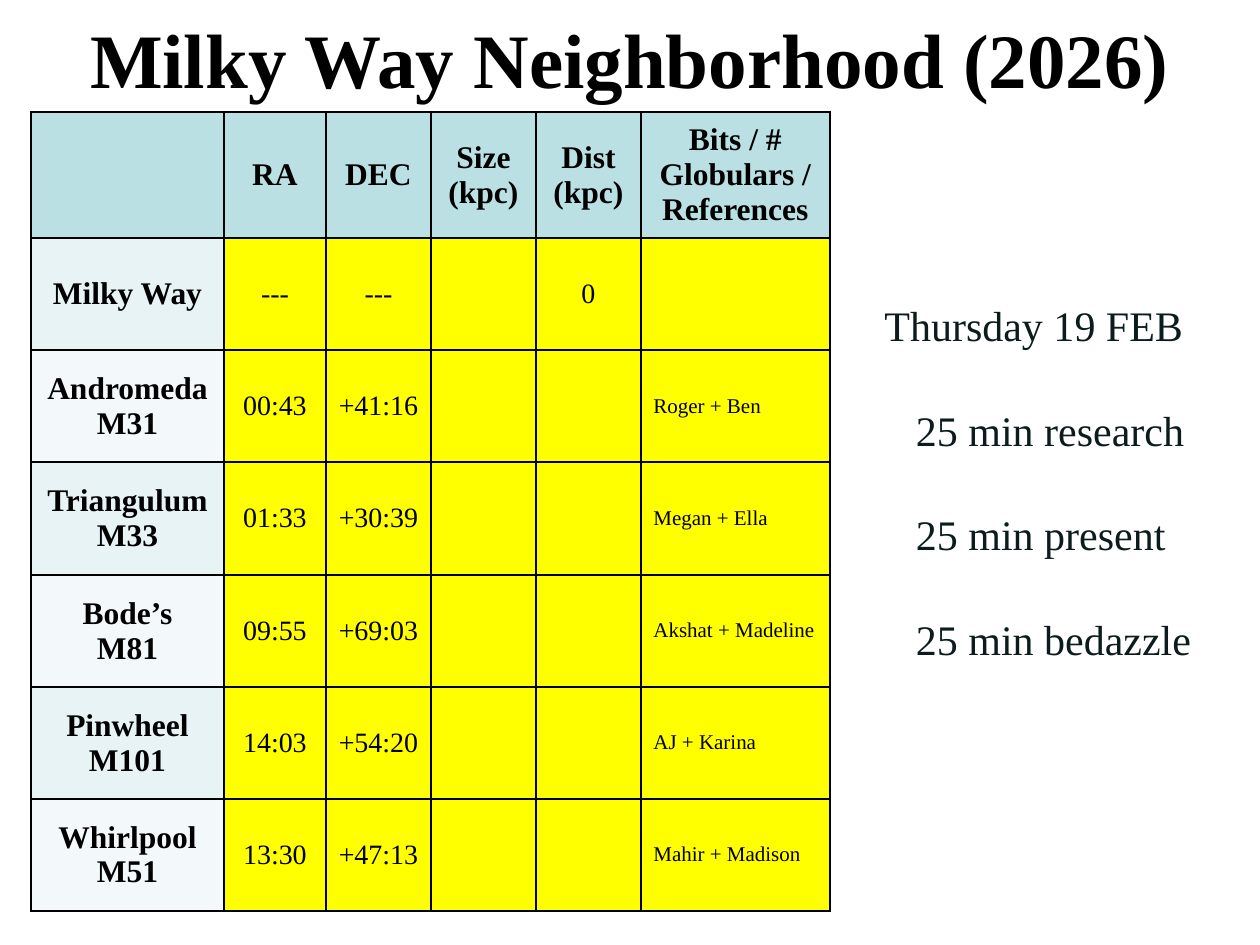
from lxml import etree
from pptx import Presentation
from pptx import util as u
from pptx.dml.color import RGBColor
from pptx.enum import text
from pptx.oxml.ns import qn

PX = 914400 // 126
FONT = "Times New Roman"
BLACK = RGBColor(0x00, 0x00, 0x00)
INK = RGBColor(0x0C, 0x1C, 0x1D)
HEADER_FILL = RGBColor(0xBB, 0xE0, 0xE3)
NAME_FILLS = RGBColor(0xF3, 0xF9, 0xFA), RGBColor(0xE7, 0xF3, 0xF4)
YELLOW = RGBColor(0xFF, 0xFF, 0x00)

TITLE = "Milky Way Neighborhood (2026)"
GALAXIES = [
    ("", "RA", "DEC", "Size\n(kpc)", "Dist (kpc)", "Bits / # Globulars / References"),
    ("Milky Way", "---", "---", "", "0", ""),
    ("Andromeda\nM31", "00:43", "+41:16", "", "", "Roger + Ben"),
    ("Triangulum\nM33", "01:33", "+30:39", "", "", "Megan + Ella"),
    ("Bode’s\nM81", "09:55", "+69:03", "", "", "Akshat + Madeline"),
    ("Pinwheel\nM101", "14:03", "+54:20", "", "", "AJ + Karina"),
    ("Whirlpool\nM51", "13:30", "+47:13", "", "", "Mahir + Madison"),
]
COLUMN_WIDTHS = [193, 102, 105, 105, 105, 189]
ROW_HEIGHTS = [103, 112, 112, 113, 112, 112, 112]
DAY = "Thursday 19 FEB"
AGENDA = ["25 min research", "25 min present", "25 min bedazzle"]


def box(left, top, width, height):
    return [u.Emu(n * PX) for n in (left, top, width, height)]


def write(frame, lines, size, color=BLACK, bold=False, align=text.PP_ALIGN.LEFT):
    """Put each line in its own paragraph and return the paragraphs."""
    for index, line in enumerate(lines):
        paragraph = frame.add_paragraph() if index else frame.paragraphs[0]
        paragraph.alignment = align
        run = paragraph.add_run()
        run.text = line
        run.font.name, run.font.size = FONT, u.Pt(size)
        run.font.bold, run.font.color.rgb = bold, color
    return frame.paragraphs


def add_borders(cell):
    """Give the cell black 1 pt edges; they must come before its fill."""
    properties = cell._tc.get_or_add_tcPr()
    for index, edge in enumerate(("lnL", "lnR", "lnT", "lnB")):
        line = etree.Element(qn("a:" + edge), w=str(u.Pt(1)))
        fill = etree.SubElement(line, qn("a:solidFill"))
        etree.SubElement(fill, qn("a:srgbClr"), val=str(BLACK))
        properties.insert(index, line)


def add_title(slide):
    frame = slide.shapes.add_textbox(*box(0, 0, 1260, 116)).text_frame
    frame.word_wrap = True
    frame.vertical_anchor = text.MSO_ANCHOR.MIDDLE
    write(frame, [TITLE], 44, bold=True, align=text.PP_ALIGN.CENTER)


def add_galaxy_table(slide):
    table = slide.shapes.add_table(
        len(GALAXIES), len(COLUMN_WIDTHS),
        *box(31, 112, sum(COLUMN_WIDTHS), sum(ROW_HEIGHTS))).table
    table.first_row = table.horz_banding = False
    for column, width in zip(table.columns, COLUMN_WIDTHS):
        column.width = u.Emu(width * PX)
    for row, height in zip(table.rows, ROW_HEIGHTS):
        row.height = u.Emu(height * PX)

    for r, values in enumerate(GALAXIES):
        for c, value in enumerate(values):
            cell = table.cell(r, c)
            heading = r == 0 or c == 0
            team = not heading and c == len(values) - 1
            cell.vertical_anchor = text.MSO_ANCHOR.MIDDLE
            cell.fill.solid()
            cell.fill.fore_color.rgb = (
                HEADER_FILL if r == 0 else NAME_FILLS[r % 2] if c == 0 else YELLOW)
            add_borders(cell)
            if value:
                write(cell.text_frame, value.split("\n"),
                      18 if heading else 12 if team else 16, bold=heading,
                      align=text.PP_ALIGN.LEFT if team else text.PP_ALIGN.CENTER)


def add_agenda(slide):
    frame = slide.shapes.add_textbox(*box(872, 289, 335, 369)).text_frame
    frame.word_wrap = False
    paragraphs = write(frame, [DAY] + AGENDA, 24, INK)
    for paragraph in paragraphs:
        paragraph.line_spacing = 1.08
    for paragraph in paragraphs[1:]:
        paragraph.space_before = u.Pt(28.8)
        paragraph._p.get_or_add_pPr().set("marL", str(u.Pt(18)))


def main():
    presentation = Presentation()
    presentation.slide_width, presentation.slide_height = u.Inches(10), u.Inches(7.5)
    slide = presentation.slides.add_slide(presentation.slide_layouts[6])
    add_title(slide)
    add_galaxy_table(slide)
    add_agenda(slide)
    presentation.save("out.pptx")


if __name__ == "__main__":
    main()
